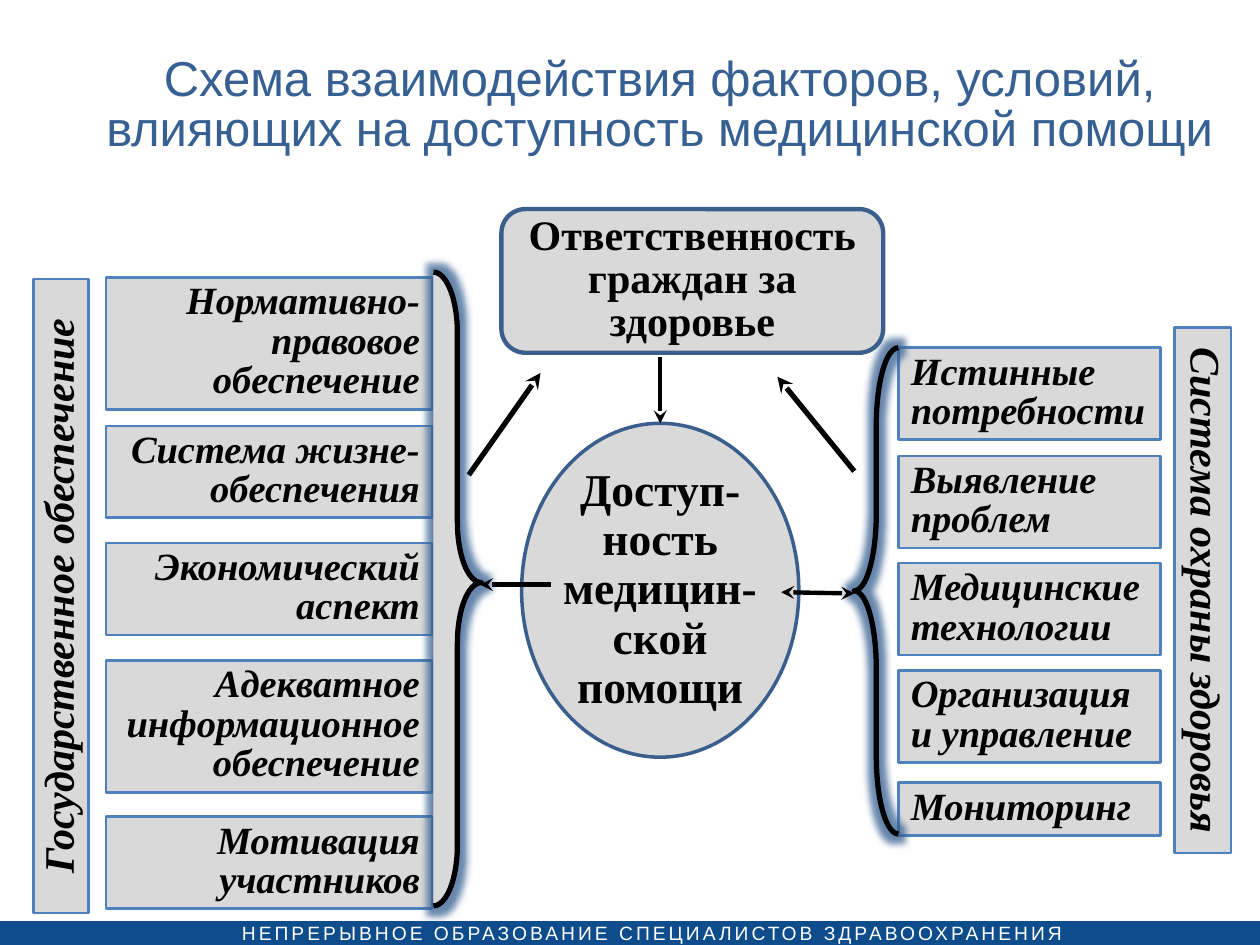
from lxml import etree
from pptx import Presentation
from pptx.dml.color import RGBColor
from pptx.enum.shapes import MSO_CONNECTOR, MSO_SHAPE
from pptx.enum.text import MSO_ANCHOR, PP_ALIGN
from pptx.oxml.ns import qn
from pptx.util import Inches, Pt

LEFT, CENTER, RIGHT = PP_ALIGN.LEFT, PP_ALIGN.CENTER, PP_ALIGN.RIGHT
TOP, MIDDLE = MSO_ANCHOR.TOP, MSO_ANCHOR.MIDDLE
RECTANGLE, ROUNDED = MSO_SHAPE.RECTANGLE, MSO_SHAPE.ROUNDED_RECTANGLE
OVAL, BRACE = MSO_SHAPE.OVAL, MSO_SHAPE.LEFT_BRACE
STRAIGHT = MSO_CONNECTOR.STRAIGHT

NAVY = RGBColor(0x0F, 0x4C, 0x8B)
TITLE_BLUE = RGBColor(0x37, 0x60, 0x92)
OUTLINE_BLUE = RGBColor(0x3A, 0x5F, 0x8C)
BOX_BLUE = RGBColor(0x4F, 0x81, 0xBD)
GRAY = RGBColor(0xD9, 0xD9, 0xD9)
BLACK = RGBColor(0, 0, 0)
WHITE = RGBColor(0xFF, 0xFF, 0xFF)
SERIF, SANS = "Times New Roman", "Arial"

STATE_FACTORS = [
    ("Нормативно-правовое обеспечение", 2.2, 1.05),
    ("Система жизне-обеспечения", 3.38, 0.73),
    ("Экономический аспект", 4.31, 0.73),
    ("Адекватное информационное обеспечение", 5.24, 1.05),
    ("Мотивация участников", 6.48, 0.73),
]
HEALTH_FACTORS = [
    ("Истинные потребности", 2.76, 0.73),
    ("Выявление проблем", 3.62, 0.73),
    ("Медицинские технологии", 4.47, 0.73),
    ("Организация и управление", 5.32, 0.73),
    ("Мониторинг", 6.21, 0.42),
]


def write_text(shape, text, size, color, font=SERIF, align=CENTER, spacing=0.85,
               anchor=TOP, bold=False, italic=False):
    frame = shape.text_frame
    frame.word_wrap = True
    frame.vertical_anchor = anchor
    paragraph = frame.paragraphs[0]
    paragraph.alignment = align
    paragraph.line_spacing = spacing
    run = paragraph.add_run()
    run.text = text
    run.font.name = font
    run.font.size = Pt(size)
    run.font.color.rgb = color
    run.font.bold = bold
    run.font.italic = italic
    return run


def set_margins(frame, margin):
    frame.margin_left = frame.margin_right = margin
    frame.margin_top = frame.margin_bottom = margin


def add_block(slide, kind, box, fill=GRAY, line=BOX_BLUE, width=1.5):
    shape = slide.shapes.add_shape(kind, *map(Inches, box))
    shape.shadow.inherit = False
    if fill is None:
        shape.fill.background()
    else:
        shape.fill.solid()
        shape.fill.fore_color.rgb = fill
    if line is None:
        shape.line.fill.background()
    else:
        shape.line.color.rgb = line
        shape.line.width = Pt(width)
    return shape


def add_factors(slide, factors, left, width, align):
    for text, top, height in factors:
        shape = add_block(slide, RECTANGLE, (left, top, width, height))
        write_text(shape, text, 22, BLACK, align=align, bold=True, italic=True)


def add_side_label(slide, text, box, rotation):
    shape = add_block(slide, RECTANGLE, box)
    shape.rotation = rotation
    write_text(shape, text, 24, BLACK, bold=True, italic=True)


def add_brace(slide, box, curve, middle, fill=None, flipped=False):
    shape = add_block(slide, BRACE, box, fill, BLACK, 3)
    shape.adjustments[0] = curve
    shape.adjustments[1] = middle
    properties = shape._element.spPr
    if flipped:
        properties.find(qn("a:xfrm")).set("flipH", "1")
    effects = properties.find(qn("a:effectLst"))
    glow = etree.SubElement(effects, qn("a:glow"), rad=str(Pt(8)))
    color = etree.SubElement(glow, qn("a:srgbClr"), val=str(TITLE_BLUE))
    etree.SubElement(color, qn("a:alpha"), val="75000")


def add_arrow(slide, start, end, width=2.5, ends=("tailEnd",)):
    points = map(Inches, (*start, *end))
    connector = slide.shapes.add_connector(STRAIGHT, *points)
    connector.line.color.rgb = BLACK
    connector.line.width = Pt(width)
    line = connector.line._get_or_add_ln()
    for name in ends:
        etree.SubElement(line, qn(f"a:{name}"), type="stealth")
    etree.SubElement(connector._element.spPr, qn("a:effectLst"))


def add_footer(slide):
    add_block(slide, RECTANGLE, (0, 7.31, 10, 0.19), NAVY, None)
    box = slide.shapes.add_textbox(Inches(1.92), Inches(7.31), Inches(6.63), Inches(0.19))
    set_margins(box.text_frame, 0)
    run = write_text(box, "НЕПРЕРЫВНОЕ ОБРАЗОВАНИЕ СПЕЦИАЛИСТОВ ЗДРАВООХРАНЕНИЯ",
                     11, WHITE, SANS, LEFT, 1.0)
    run.font._element.set("spc", "170")


def add_title(slide):
    title = slide.shapes.title
    title.left, title.top = Inches(0.59), Inches(0)
    title.width, title.height = Inches(9.29), Inches(1.62)
    title.text_frame.margin_top = Inches(0.45)
    write_text(title, "Схема взаимодействия факторов, условий, "
               "влияющих на доступность медицинской помощи", 28, TITLE_BLUE, SANS)


def add_center(slide):
    circle = add_block(slide, OVAL, (4.14, 3.36, 2.2, 2.65), line=OUTLINE_BLUE, width=2)
    set_margins(circle.text_frame, 0)
    write_text(circle, "Доступ-ность медицин-ской помощи", 26, BLACK,
               spacing=0.9, anchor=MIDDLE, bold=True)
    citizens = add_block(slide, ROUNDED, (3.98, 1.66, 3.03, 1.14),
                         line=OUTLINE_BLUE, width=2.5)
    write_text(citizens, "Ответственность граждан за здоровье", 24, BLACK,
               anchor=MIDDLE, bold=True)
    add_arrow(slide, (3.72, 3.77), (4.29, 2.96), 3)
    add_arrow(slide, (6.78, 3.74), (6.17, 2.99), 3)


def add_state_side(slide):
    add_factors(slide, STATE_FACTORS, 0.84, 2.59, RIGHT)
    add_side_label(slide, "Государственное обеспечение", (-2.03, 4.51, 5.03, 0.44), 270)
    add_brace(slide, (3.44, 2.16, 0.38, 5.03), 1.27, 0.49, GRAY, True)
    add_arrow(slide, (3.81, 4.64), (4.37, 4.64), ends=("headEnd",))


def add_health_side(slide):
    add_factors(slide, HEALTH_FACTORS, 7.13, 2.08, LEFT)
    add_side_label(slide, "Система охраны здоровья", (7.46, 4.46, 4.17, 0.45), 90)
    add_brace(slide, (6.78, 2.76, 0.35, 3.86), 1.75, 0.5)
    add_arrow(slide, (6.2, 4.7), (6.78, 4.71), ends=("headEnd", "tailEnd"))


def main():
    presentation = Presentation()
    presentation.slide_width = Inches(10)
    presentation.slide_height = Inches(7.5)
    slide = presentation.slides.add_slide(presentation.slide_layouts[5])
    add_footer(slide)
    add_title(slide)
    add_center(slide)
    add_state_side(slide)
    add_health_side(slide)
    add_arrow(slide, (5.24, 2.83), (5.24, 3.36))
    presentation.save("out.pptx")


if __name__ == "__main__":
    main()
